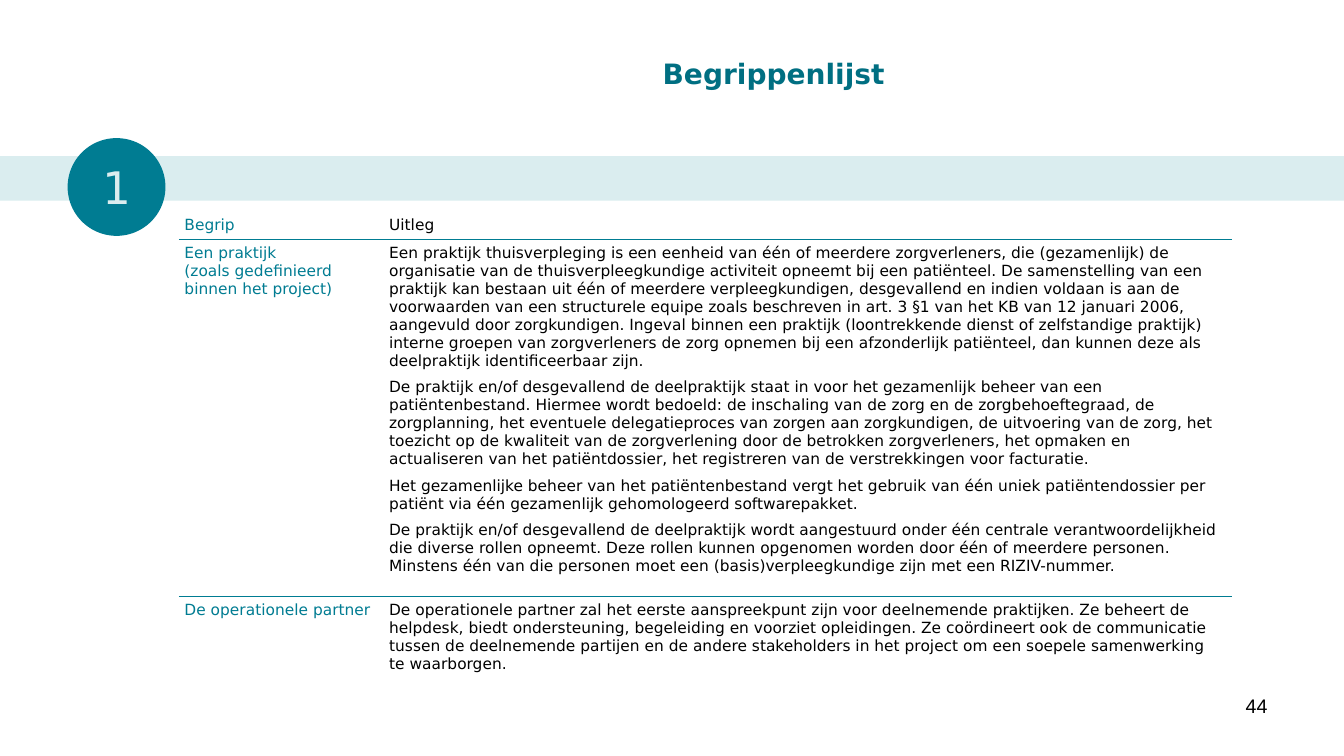
"""Build the glossary slide with a numbered band and a table of terms."""
import pptx
import pptx.dml.color
import pptx.enum.shapes
import pptx.enum.text
import pptx.oxml
import pptx.oxml.ns
import pptx.util

COLORS = {"teal": "007C92", "title": "006F82", "pale": "DAEDEF", "white": "FFFFFF", "black": "000000"}
FONT = "DejaVu Sans"
WIDTH, HEIGHT = pptx.util.Inches(13.33), pptx.util.Inches(7.5)
COLS = (15.23, 63.02)
ROWS = (3.6, 47.2, 12.27)
TERMS = [
    ("Begrip", ["Uitleg"]),
    ("Een praktijk \v(zoals gedefinieerd binnen het project)", [
        "Een praktijk thuisverpleging is een eenheid van één of meerdere zorgverleners, die (gezamenlijk) de "
        "organisatie van de thuisverpleegkundige activiteit opneemt bij een patiënteel. De samenstelling van een "
        "praktijk kan bestaan uit één of meerdere verpleegkundigen, desgevallend en indien voldaan is aan de "
        "voorwaarden van een structurele equipe zoals beschreven in art. 3 §1 van het KB van 12 januari 2006, "
        "aangevuld door zorgkundigen. Ingeval binnen een praktijk (loontrekkende dienst of zelfstandige praktijk) "
        "interne groepen van zorgverleners de zorg opnemen bij een afzonderlijk patiënteel, dan kunnen deze als "
        "deelpraktijk identificeerbaar zijn.",
        "De praktijk en/of desgevallend de deelpraktijk staat in voor het gezamenlijk beheer van een "
        "patiëntenbestand. Hiermee wordt bedoeld: de inschaling van de zorg en de zorgbehoeftegraad, de "
        "zorgplanning, het eventuele delegatieproces van zorgen aan zorgkundigen, de uitvoering van de zorg, het "
        "toezicht op de kwaliteit van de zorgverlening door de betrokken zorgverleners, het opmaken en "
        "actualiseren van het patiëntdossier, het registreren van de verstrekkingen voor facturatie.",
        "Het gezamenlijke beheer van het patiëntenbestand vergt het gebruik van één uniek patiëntendossier per "
        "patiënt via één gezamenlijk gehomologeerd softwarepakket.",
        "De praktijk en/of desgevallend de deelpraktijk wordt aangestuurd onder één centrale verantwoordelijkheid "
        "die diverse rollen opneemt. Deze rollen kunnen opgenomen worden door één of meerdere personen. "
        "Minstens één van die personen moet een (basis)verpleegkundige zijn met een RIZIV-nummer.",
    ]),
    ("De operationele partner", [
        "De operationele partner zal het eerste aanspreekpunt zijn voor deelnemende praktijken. Ze beheert de "
        "helpdesk, biedt ondersteuning, begeleiding en voorziet opleidingen. Ze coördineert ook de communicatie "
        "tussen de deelnemende partijen en de andere stakeholders in het project om een soepele samenwerking te "
        "waarborgen.",
    ]),
]


def rgb(name):
    """Return the named colour."""
    return pptx.dml.color.RGBColor.from_string(COLORS[name])


def across(share):
    """Turn a percentage of the slide width into a length."""
    return round(WIDTH * share / 100)


def down(share):
    """Turn a percentage of the slide height into a length."""
    return round(HEIGHT * share / 100)


def box(x, y, w, h):
    """Return left, top, width and height from percentages."""
    return across(x), down(y), across(w), down(h)


def write(tf, texts, size, color, align="LEFT", name=FONT, bold=False, after=0):
    """Fill a text frame with evenly formatted paragraphs."""
    tf.word_wrap = True
    for i, text in enumerate(texts):
        p = tf.add_paragraph() if i else tf.paragraphs[0]
        p.text = text
        p.alignment = getattr(pptx.enum.text.PP_ALIGN, align)
        p.space_after = pptx.util.Pt(after)
        p.font.size, p.font.name, p.font.bold = pptx.util.Pt(size), name, bold
        p.font.color.rgb = rgb(color)


def add_title(s, text, place):
    """Move and format the title placeholder."""
    sp = s.shapes.title
    sp.left, sp.top, sp.width, sp.height = place
    tf = sp.text_frame
    tf.auto_size = pptx.enum.text.MSO_AUTO_SIZE.NONE
    tf.vertical_anchor = pptx.enum.text.MSO_ANCHOR.MIDDLE
    write(tf, [text], 20, "title", "CENTER", bold=True)


def add_block(s, kind, place, color):
    """Add a flat preset shape without outline."""
    sp = s.shapes.add_shape(getattr(pptx.enum.shapes.MSO_SHAPE, kind), *place)
    sp.shadow.inherit = False
    sp.fill.solid()
    sp.fill.fore_color.rgb = rgb(color)
    sp.line.fill.background()
    return sp


def set_border(cell, side, color, width):
    """Append one border line to a table cell."""
    ns = pptx.oxml.ns.nsdecls("a")
    cell._tc.get_or_add_tcPr().append(pptx.oxml.parse_xml(
        f'<a:ln{side} {ns} w="{pptx.util.Pt(width)}"><a:solidFill>'
        f'<a:srgbClr val="{COLORS[color]}"/></a:solidFill></a:ln{side}>'))


def format_cell(cell, row, last):
    """Set the margins, borders and fill of a table cell."""
    inset = pptx.util.Inches(0.05)
    cell.margin_left = cell.margin_right = cell.margin_top = cell.margin_bottom = inset
    rule, edge = ("teal", 0.5), ("white", 1)
    borders = {"L": edge, "R": edge, "T": rule if row else edge, "B": edge if row == last else rule}
    for side, border in borders.items():
        set_border(cell, side, *border)
    cell.fill.solid()
    cell.fill.fore_color.rgb = rgb("white")


def add_terms(s, x, y):
    """Add the table of terms and explanations."""
    place = box(x, y, sum(COLS), sum(ROWS))
    table = s.shapes.add_table(len(ROWS), len(COLS), *place).table
    for col, share in zip(table.columns, COLS):
        col.width = across(share)
    for i, (share, (term, texts)) in enumerate(zip(ROWS, TERMS)):
        table.rows[i].height = down(share)
        for j in range(len(COLS)):
            format_cell(table.cell(i, j), i, len(ROWS) - 1)
        write(table.cell(i, 0).text_frame, [term], 11, "teal")
        write(table.cell(i, 1).text_frame, texts, 11, "black", after=6 if i else 0)


def main():
    """Build and save the slide."""
    prs = pptx.Presentation()
    prs.slide_width, prs.slide_height = WIDTH, HEIGHT
    s = prs.slides.add_slide(prs.slide_layouts[5])
    add_block(s, "RECTANGLE", box(0, 20.67, 100, 5.87), "pale")
    add_title(s, "Begrippenlijst", box(20.1, 4, 74.94, 11.33))
    number = s.shapes.add_textbox(*box(71.72, 91.07, 23.33, 6.93))
    write(number.text_frame, ["44"], 14, "black", "RIGHT", "Arial")
    badge = add_block(s, "OVAL", box(5.03, 18.27, 7.28, 12.93), "teal")
    write(badge.text_frame, ["1"], 32, "pale", "CENTER")
    add_terms(s, 13.35, 27.87)
    prs.save("out.pptx")


if __name__ == "__main__":
    main()
